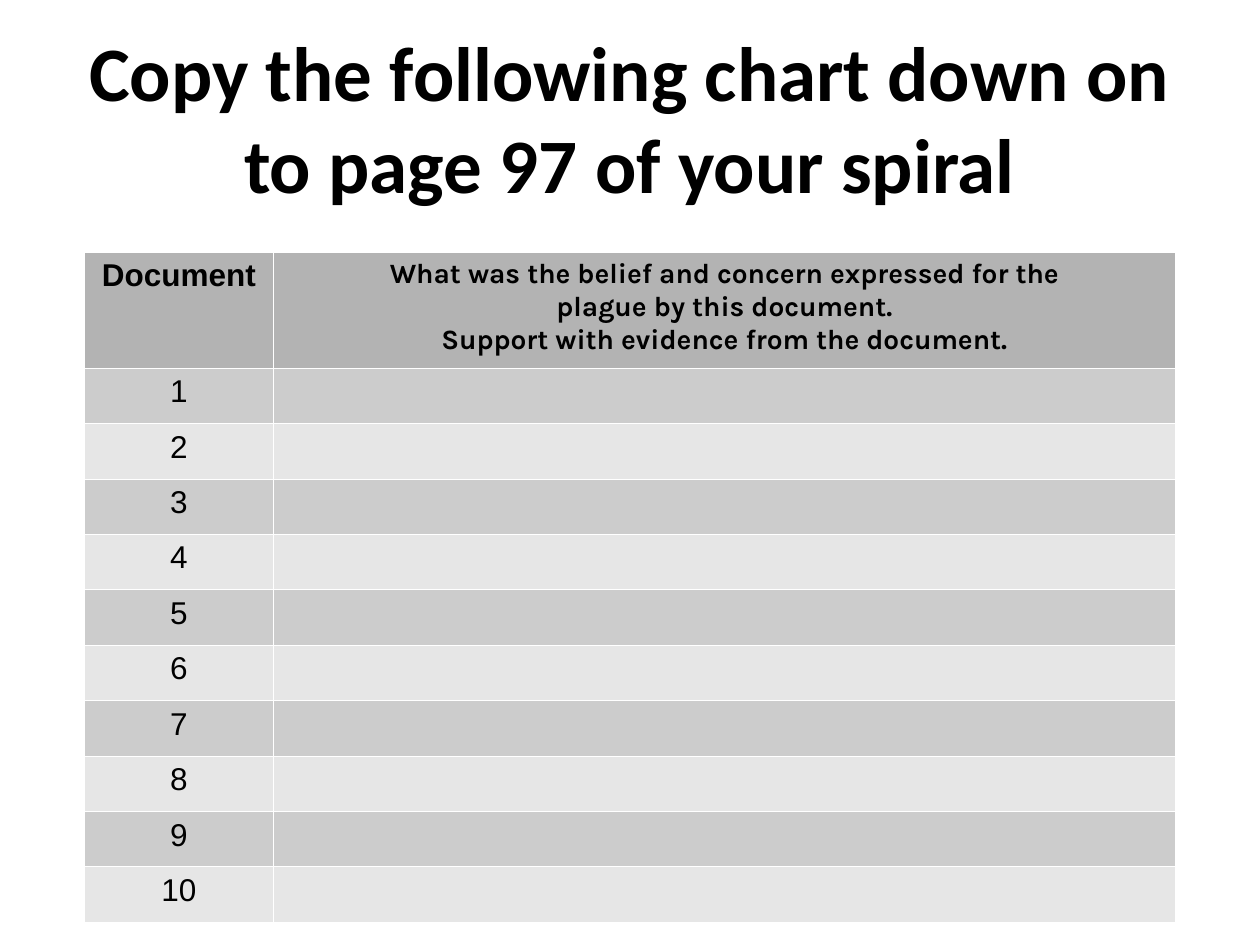
from lxml.etree import SubElement
from pptx import Presentation
from pptx.dml.color import RGBColor
from pptx.enum.text import MSO_ANCHOR, PP_ALIGN
from pptx.oxml.ns import qn
from pptx.util import Inches, Pt

COLORS = {
    "text": "000000",
    "header": "B3B3B3",
    "odd": "CCCCCC",
    "even": "E6E6E6",
    "border": "FFFFFF",
}
TITLE = "Copy the following chart down on to page 97 of your spiral"
QUESTION = "\n".join([
    "What was the belief and concern expressed for the",
    "plague by this document.",
    "Support with evidence from the document.",
])
DOCUMENT_COUNT = 10
COLUMN_WIDTHS = (1.5, 7.16)
HEADER_HEIGHT = 0.92
ROW_HEIGHT = 0.44
BORDER_WIDTH = Pt(0.06)


def write_text(frame, wording, font_name, size, bold=False):
    frame.text = wording
    for paragraph in frame.paragraphs:
        paragraph.alignment = PP_ALIGN.CENTER
        for run in paragraph.runs:
            run.font.name = font_name
            run.font.size = Pt(size)
            run.font.bold = bold
            run.font.color.rgb = RGBColor.from_string(COLORS["text"])


def add_title(slide):
    title = slide.shapes.add_textbox(Inches(0.5), Inches(0.3), Inches(9), Inches(1.25))
    title.text_frame.word_wrap = True
    title.text_frame.vertical_anchor = MSO_ANCHOR.MIDDLE
    write_text(title.text_frame, TITLE, "Calibri", 44, bold=True)


def style_cell(cell, color):
    properties = cell._tc.get_or_add_tcPr()
    for side in ("lnL", "lnR", "lnT", "lnB"):
        border = SubElement(properties, qn(f"a:{side}"), w=str(int(BORDER_WIDTH)))
        border_fill = SubElement(border, qn("a:solidFill"))
        SubElement(border_fill, qn("a:srgbClr"), val=COLORS["border"])
    cell.fill.solid()
    cell.fill.fore_color.rgb = RGBColor.from_string(COLORS[color])


def add_document_table(slide):
    table = slide.shapes.add_table(
        DOCUMENT_COUNT + 1, len(COLUMN_WIDTHS), Inches(0.67), Inches(2),
        Inches(sum(COLUMN_WIDTHS)),
        Inches(HEADER_HEIGHT + DOCUMENT_COUNT * ROW_HEIGHT),
    ).table
    for column, width in zip(table.columns, COLUMN_WIDTHS):
        column.width = Inches(width)
    for number, row in enumerate(table.rows):
        row.height = Inches(ROW_HEIGHT if number else HEADER_HEIGHT)
        color = ("even", "odd")[number % 2] if number else "header"
        for cell in row.cells:
            style_cell(cell, color)
        if number:
            write_text(row.cells[0].text_frame, str(number), "Arial", 18)
    write_text(table.cell(0, 0).text_frame, "Document", "Arial", 18, bold=True)
    write_text(table.cell(0, 1).text_frame, QUESTION, "Karla", 16, bold=True)


def main():
    presentation = Presentation()
    presentation.slide_width = Inches(10)
    presentation.slide_height = Inches(7.5)
    slide = presentation.slides.add_slide(presentation.slide_layouts[6])
    add_title(slide)
    add_document_table(slide)
    presentation.save("out.pptx")


if __name__ == "__main__":
    main()
